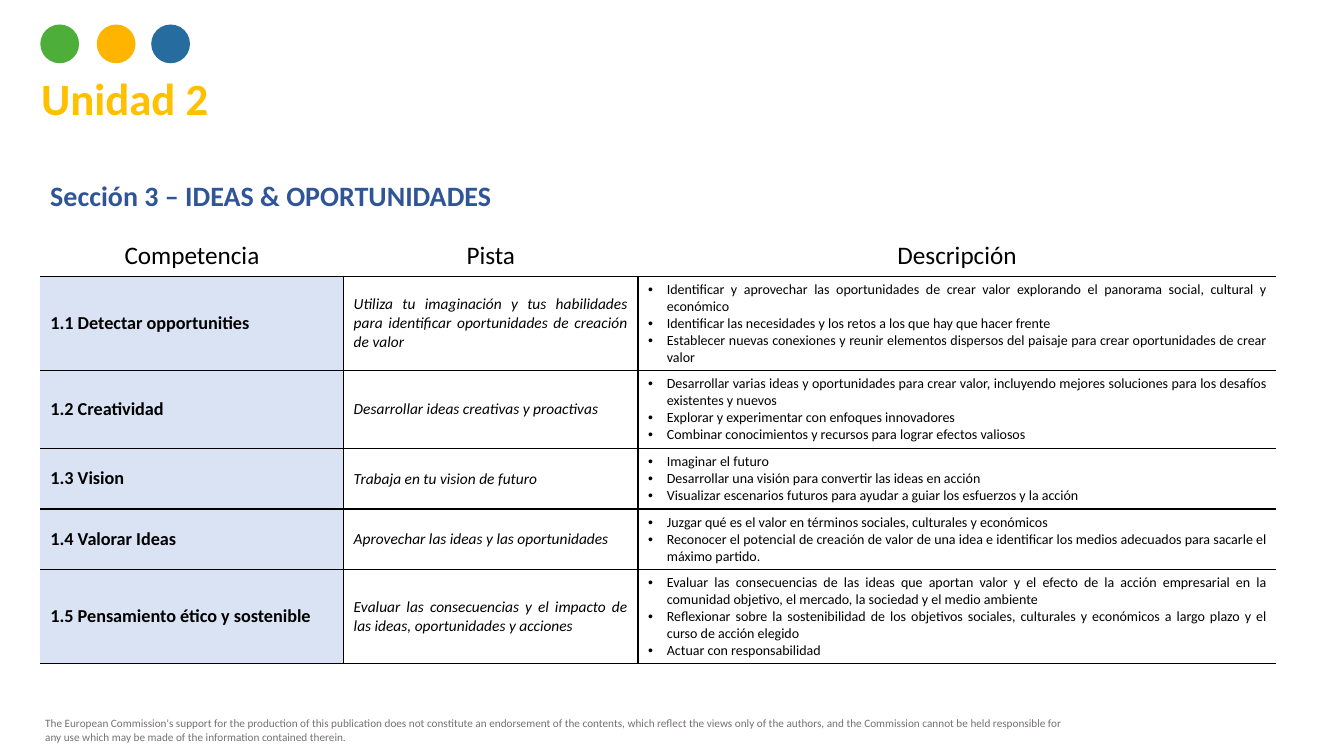
from dataclasses import dataclass

from lxml import etree
from pptx import Presentation
from pptx import util as u
from pptx.dml.color import RGBColor
from pptx.enum import shapes, text
from pptx.oxml import ns


@dataclass(frozen=True)
class Theme:
    font: str = "Calibri"
    black: str = "000000"
    gold: str = "FFC000"
    navy: str = "2F5597"
    grey: str = "767171"
    label_fill: str = "DAE3F3"
    dots: tuple = ("4EAE3A", "FFB500", "266C9F")
    title: float = 32
    section: float = 20
    header: float = 18
    label: float = 13
    hint: float = 11
    body: float = 10
    small: float = 8
    rule: float = 1


T = Theme()
NO_STYLE = "{2D5ABB26-0587-4C30-8999-92F81FD0307C}"

HEADERS = ("Competencia", "Pista", "Descripción")
COL_WIDTHS = (216.7, 210.2, 456)
ROW_HEIGHTS = (28.8, 67, 55.7, 43.3, 43.3, 67)
COMPETENCES = [
    ("1.1 Detectar opportunities",
     "Utiliza tu imaginación y tus habilidades para identificar oportunidades de creación de valor",
     ["Identificar y aprovechar las oportunidades de crear valor explorando el panorama social, cultural y económico",
      "Identificar las necesidades y los retos a los que hay que hacer frente",
      "Establecer nuevas conexiones y reunir elementos dispersos del paisaje para crear oportunidades de crear valor"]),
    ("1.2 Creatividad",
     "Desarrollar ideas creativas y proactivas",
     ["Desarrollar varias ideas y oportunidades para crear valor, incluyendo mejores soluciones para los desafíos "
      "existentes y nuevos",
      "Explorar y experimentar con enfoques innovadores",
      "Combinar conocimientos y recursos para lograr efectos valiosos"]),
    ("1.3 Vision",
     "Trabaja en tu vision de futuro",
     ["Imaginar el futuro",
      "Desarrollar una visión para convertir las ideas en acción",
      "Visualizar escenarios futuros para ayudar a guiar los esfuerzos y la acción"]),
    ("1.4 Valorar Ideas",
     "Aprovechar las ideas y las oportunidades",
     ["Juzgar qué es el valor en términos sociales, culturales y económicos",
      "Reconocer el potencial de creación de valor de una idea e identificar los medios adecuados para sacarle el "
      "máximo partido."]),
    ("1.5 Pensamiento ético y sostenible",
     "Evaluar las consecuencias y el impacto de las ideas, oportunidades y acciones",
     ["Evaluar las consecuencias de las ideas que aportan valor y el efecto de la acción empresarial en la comunidad "
      "objetivo, el mercado, la sociedad y el medio ambiente",
      "Reflexionar sobre la sostenibilidad de los objetivos sociales, culturales y económicos a largo plazo y el "
      "curso de acción elegido",
      "Actuar con responsabilidad"]),
]
DISCLAIMER = (
    "The European Commission's support for the production of this publication does not constitute an endorsement "
    "of the contents, which reflect the views only of the authors, and the Commission cannot be held responsible "
    "for any use which may be made of the information contained therein.")


def write(p, words, size, color=T.black, align="LEFT", **fmt):
    p.alignment = getattr(text.PP_ALIGN, align)
    r = p.add_run()
    r.text = words
    r.font.color.rgb = RGBColor.from_string(color)
    for name, value in {"name": T.font, "size": u.Pt(size), **fmt}.items():
        setattr(r.font, name, value)


def add_text(s, box, words, size, color, **fmt):
    tf = s.shapes.add_textbox(*map(u.Pt, box)).text_frame
    tf.word_wrap = True
    tf.auto_size = text.MSO_AUTO_SIZE.SHAPE_TO_FIT_TEXT
    write(tf.paragraphs[0], words, size, color, **fmt)


def add_bullet(p, indent=13.5):
    pPr = p._p.get_or_add_pPr()
    pPr.set("marL", str(u.Pt(indent)))
    pPr.set("indent", str(-u.Pt(indent)))
    etree.SubElement(pPr, ns.qn("a:buFont")).set("typeface", "Arial")
    etree.SubElement(pPr, ns.qn("a:buChar")).set("char", "•")


def add_borders(cell, sides):
    # Sides come in schema order: L, R, T, B
    tcPr = cell._tc.get_or_add_tcPr()
    for side in sides:
        ln = etree.SubElement(tcPr, ns.qn(f"a:ln{side}"), w=str(u.Pt(T.rule)))
        fill = etree.SubElement(ln, ns.qn("a:solidFill"))
        etree.SubElement(fill, ns.qn("a:srgbClr")).set("val", T.black)


def header_region(s, x, y):
    # Three dots above the unit title
    for offset, color in zip((0, 40.3, 79.2), T.dots):
        sp = s.shapes.add_shape(shapes.MSO_SHAPE.OVAL, *map(u.Pt, (x + offset, y, 27.7, 27.7)))
        sp.shadow.inherit = False
        sp.fill.solid()
        sp.fill.fore_color.rgb = RGBColor.from_string(color)
        sp.line.fill.background()
    add_text(s, (x - 6.5, y + 29.3, 158.4, 46), "Unidad 2", T.title, T.gold, bold=True)


def competence_table(s, x, y):
    size = (sum(COL_WIDTHS), sum(ROW_HEIGHTS))
    table = s.shapes.add_table(len(ROW_HEIGHTS), len(COL_WIDTHS), *map(u.Pt, (x, y, *size))).table
    table.first_row = table.horz_banding = False
    table._tbl.tblPr.find(ns.qn("a:tableStyleId")).text = NO_STYLE
    for col, width in zip(table.columns, COL_WIDTHS):
        col.width = u.Pt(width)
    for row, height in zip(table.rows, ROW_HEIGHTS):
        row.height = u.Pt(height)

    # Rules and fills
    for i, row in enumerate(table.rows):
        for j, cell in enumerate(row.cells):
            cell.vertical_anchor = text.MSO_ANCHOR.MIDDLE
            add_borders(cell, "B" if i == 0 else ("RTB", "LTB", "TB")[j])
            if i and j == 0:
                cell.fill.solid()
                cell.fill.fore_color.rgb = RGBColor.from_string(T.label_fill)
            else:
                cell.fill.background()

    # Wording
    for j, words in enumerate(HEADERS):
        write(table.cell(0, j).text_frame.paragraphs[0], words, T.header, align="CENTER")
    for i, (label, hint, points) in enumerate(COMPETENCES, 1):
        first, second, third = (table.cell(i, j).text_frame for j in range(3))
        write(first.paragraphs[0], label, T.label, align="JUSTIFY", bold=True)
        write(second.paragraphs[0], hint, T.hint, align="JUSTIFY", italic=True)
        for k, point in enumerate(points):
            p = third.add_paragraph() if k else third.paragraphs[0]
            add_bullet(p)
            write(p, point, T.body, align="JUSTIFY")


def section_region(s, x, y):
    # Section heading with its table
    add_text(s, (x, y, sum(COL_WIDTHS), 31.7), "Sección 3 – IDEAS & OPORTUNIDADES",
             T.section, T.navy, align="JUSTIFY", bold=True)
    competence_table(s, x, y + 44.7)


def footer_region(s, box):
    # Disclaimer
    add_text(s, box, DISCLAIMER, T.small, T.grey)


def main():
    prs = Presentation()
    prs.slide_width, prs.slide_height = u.Pt(960), u.Pt(540)
    s = prs.slides.add_slide(prs.slide_layouts[6])
    footer_region(s, (25.2, 508.3, 753, 26.6))
    header_region(s, 28.8, 17.5)
    section_region(s, 28.8, 123.8)
    prs.save("out.pptx")


if __name__ == "__main__":
    main()
